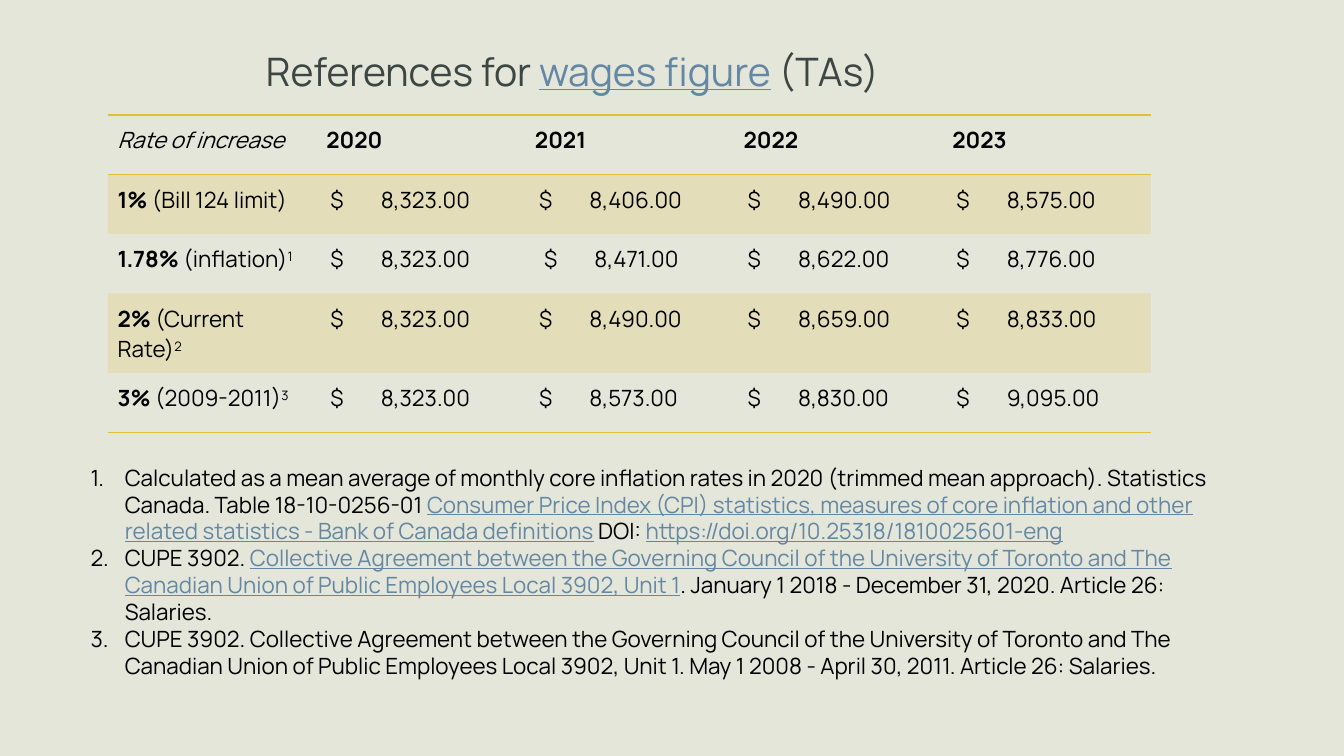
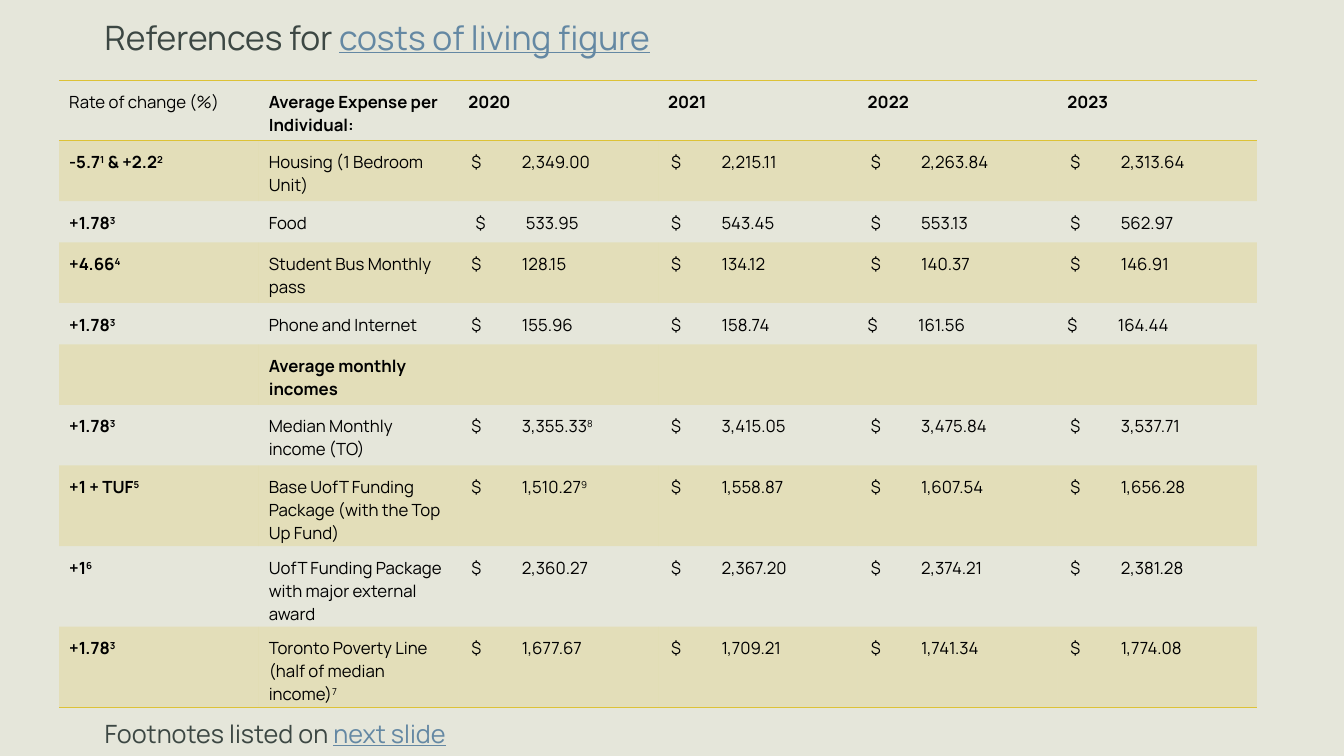
from itertools import product

from lxml import etree
from pptx import Presentation
from pptx import util as u
from pptx.dml.color import RGBColor
from pptx.enum import text
from pptx.oxml.ns import qn

WIDTH, HEIGHT = 13.33, 7.5
FONT = "Manrope"
COLORS = {
    "background": "E5E6DA",
    "title": "3C4743",
    "link": "6488A3",
    "body": "000000",
    "gold": "DDC237",
}
BAND_ALPHA = 20


def bold(words):
    return words, "bold"


def italic(words):
    return words, "italic"


def link(words):
    return words, "link"


def sup(words):
    return words, "sup"


def bold_sup(words):
    return words, "bold sup"


def across(percent):
    return u.Inches(WIDTH * percent / 100)


def down(percent):
    return u.Inches(HEIGHT * percent / 100)


class Deck:
    """Shared style and the slide being built."""

    def __init__(self):
        self.presentation = Presentation()
        self.presentation.slide_width = u.Inches(WIDTH)
        self.presentation.slide_height = u.Inches(HEIGHT)
        self.slide = None

    def new_slide(self):
        self.slide = self.presentation.slides.add_slide(self.presentation.slide_layouts[6])
        fill = self.slide.background.fill
        fill.solid()
        fill.fore_color.rgb = RGBColor.from_string(COLORS["background"])

    def add_runs(self, paragraph, parts, size, color):
        """Fill a paragraph from plain strings and (words, style) pairs."""
        parts = parts if isinstance(parts, list) else [parts]
        for part in parts:
            words, style = part if isinstance(part, tuple) else (part, "")
            run = paragraph.add_run()
            run.text = words
            font = run.font
            font.name, font.size = FONT, u.Pt(size)
            font.bold = "bold" in style
            font.italic = "italic" in style
            font.underline = "link" in style
            font.color.rgb = RGBColor.from_string(COLORS["link" if "link" in style else color])
            if "sup" in style:
                font._element.set("baseline", "30000")

    def text_box(self, left, top, width, height):
        """Add a wrapping box; lengths are percentages of the slide's size."""
        shape = self.slide.shapes.add_textbox(
            across(left), down(top), across(width), down(height))
        shape.text_frame.word_wrap = True
        return shape.text_frame

    def heading(self, box, parts, size):
        self.add_runs(self.text_box(*box).paragraphs[0], parts, size, "title")

    def numbered_list(self, box, items, size):
        frame = self.text_box(*box)
        for index, parts in enumerate(items):
            paragraph = frame.add_paragraph() if index else frame.paragraphs[0]
            properties = paragraph._p.get_or_add_pPr()
            properties.set("marL", str(u.Inches(0.5)))
            properties.set("indent", str(u.Inches(-0.34)))
            bullet_color = etree.SubElement(properties, qn("a:buClr"))
            etree.SubElement(bullet_color, qn("a:srgbClr"), val=COLORS["body"])
            etree.SubElement(properties, qn("a:buFont"), typeface=FONT)
            etree.SubElement(properties, qn("a:buAutoNum"), type="arabicPeriod")
            self.add_runs(paragraph, parts, size, "body")

    def amount(self, paragraph, value, size, stops):
        """Set a dollar sign and a value, at two distances from the cell's text edge."""
        start, tab = stops
        properties = paragraph._p.get_or_add_pPr()
        properties.set("marL", str(u.Inches(start)))
        properties.set("indent", "0")
        tabs = etree.SubElement(properties, qn("a:tabLst"))
        etree.SubElement(tabs, qn("a:tab"), pos=str(u.Inches(tab)), algn="l")
        value = value if isinstance(value, list) else [value]
        self.add_runs(paragraph, ["$\t" + value[0], *value[1:]], size, "body")

    def border(self, cell, sides):
        """Draw gold rules on the named sides and none on the others."""
        properties = cell._tc.get_or_add_tcPr()
        for position, side in enumerate(("lnL", "lnR", "lnT", "lnB")):
            line = etree.Element(qn("a:" + side), w=str(u.Pt(1)))
            if side in sides:
                fill = etree.SubElement(line, qn("a:solidFill"))
                etree.SubElement(fill, qn("a:srgbClr"), val=COLORS["gold"])
            else:
                etree.SubElement(line, qn("a:noFill"))
            properties.insert(position, line)

    def table(self, left, top, column_width, heights, rows, size, first_amount, stops):
        """Add a banded table; columns from first_amount on hold money below the header."""
        row_count, column_count = len(rows), len(rows[0])
        table = self.slide.shapes.add_table(
            row_count, column_count, across(left), down(top),
            u.Inches(column_width * column_count), u.Inches(sum(heights))).table
        for column in table.columns:
            column.width = u.Inches(column_width)
        for row, height in zip(table.rows, heights):
            row.height = u.Inches(height)
        for r, c in product(range(row_count), range(column_count)):
            cell, value = table.cell(r, c), rows[r][c]
            cell.margin_left = cell.margin_right = u.Inches(0.1)
            cell.margin_top = cell.margin_bottom = u.Inches(0.1)
            cell.vertical_anchor = text.MSO_ANCHOR.TOP
            if r % 2:
                cell.fill.solid()
                cell.fill.fore_color.rgb = RGBColor.from_string(COLORS["gold"])
                color = cell._tc.tcPr.find(".//" + qn("a:srgbClr"))
                etree.SubElement(color, qn("a:alpha"), val=str(BAND_ALPHA * 1000))
            else:
                cell.fill.background()
            sides = {0: ("lnT", "lnB"), 1: ("lnT",), row_count - 1: ("lnB",)}
            self.border(cell, sides.get(r, ()))
            paragraph = cell.text_frame.paragraphs[0]
            if not value:
                paragraph.font.size = u.Pt(size)
            elif r and c >= first_amount:
                self.amount(paragraph, value, size, stops(r, c, value))
            else:
                self.add_runs(paragraph, value, size, "body")


YEARS = [bold(str(year)) for year in range(2020, 2024)]

WAGES = [
    [italic("Rate of increase"), *YEARS],
    [[bold("1%"), " (Bill 124 limit)"], "8,323.00", "8,406.00", "8,490.00", "8,575.00"],
    [[bold("1.78%"), " (inflation)", sup("1")], "8,323.00", "8,471.00", "8,622.00", "8,776.00"],
    [[bold("2%"), " (Current Rate)", sup("2")], "8,323.00", "8,490.00", "8,659.00", "8,833.00"],
    [[bold("3%"), " (2009-2011)", sup("3")], "8,323.00", "8,573.00", "8,830.00", "9,095.00"],
]

WAGE_SOURCES = [
    ["Calculated as a mean average of monthly core inflation rates in 2020 (trimmed mean "
     "approach). Statistics Canada. Table 18-10-0256-01 ",
     link("Consumer Price Index (CPI) statistics, measures of core inflation and other related "
          "statistics - Bank of Canada definitions"),
     " DOI: ", link("https://doi.org/10.25318/1810025601-eng")],
    ["CUPE 3902. ",
     link("Collective Agreement between the Governing Council of the University of Toronto and "
          "The Canadian Union of Public Employees Local 3902, Unit 1"),
     ". January 1 2018 - December 31, 2020. Article 26: Salaries."],
    "CUPE 3902. Collective Agreement between the Governing Council of the University of Toronto "
    "and The Canadian Union of Public Employees Local 3902, Unit 1. May 1 2008 - April 30, 2011. "
    "Article 26: Salaries.",
]

INFLATION = [bold("+1.78"), bold_sup("3")]
LIVING_COSTS = [
    ["Rate of change (%)", bold("Average Expense per Individual:"), *YEARS],
    [[bold("-5.7"), bold_sup("1"), bold(" & +2.2"), bold_sup("2")], "Housing (1 Bedroom Unit)",
     "2,349.00", "2,215.11", "2,263.84", "2,313.64"],
    [INFLATION, "Food", "533.95", "543.45", "553.13", "562.97"],
    [[bold("+4.66"), bold_sup("4")], "Student Bus Monthly pass",
     "128.15", "134.12", "140.37", "146.91"],
    [INFLATION, "Phone and Internet", "155.96", "158.74", "161.56", "164.44"],
    ["", bold("Average monthly incomes"), "", "", "", ""],
    [INFLATION, "Median Monthly income (TO)",
     ["3,355.33", sup("8")], "3,415.05", "3,475.84", "3,537.71"],
    [[bold("+1 + TUF"), bold_sup("5")], "Base UofT Funding Package (with the Top Up Fund)",
     ["1,510.27", sup("9")], "1,558.87", "1,607.54", "1,656.28"],
    [[bold("+1"), bold_sup("6")], "UofT Funding Package with major external award",
     "2,360.27", "2,367.20", "2,374.21", "2,381.28"],
    [INFLATION, ["Toronto Poverty Line (half of median income)", sup("7")],
     "1,677.67", "1,709.21", "1,741.34", "1,774.08"],
]


def wage_stops(row, column, value):
    return (0.09, 0.39) if (row, column) == (2, 2) else (0.04, 0.26)


def cost_stops(row, column, value):
    """Set smaller sums further in, and the 2020 column further than the rest."""
    special = {(2, 2): (0.07, 0.46), (4, 4): (0, 0.27), (4, 5): (0, 0.27)}
    thousands = "," in value[0] or "," in value
    tab = (0.3 if thousands else 0.43) if column == 2 else (0.19 if thousands else 0.3)
    return special.get((row, column), (0.03, tab))


def main():
    deck = Deck()

    # Wages: title, table and numbered sources
    deck.new_slide()
    deck.heading((19.05, 5.6, 49.6, 7.6),
                 ["References for ", link("wages figure"), " (TAs)"], 28)
    deck.table(8, 15.2, 2.07, [0.59, 0.59, 0.59, 0.79, 0.59], WAGES, 16, 1, wage_stops)
    deck.numbered_list((4.8, 60.7, 87.6, 30.1), WAGE_SOURCES, 16)

    # Costs of living: table, title and closing note
    deck.new_slide()
    short, medium, tall = 0.41, 0.6, 0.8
    heights = [medium, medium, short, medium, short, medium, medium, tall, tall, tall]
    deck.table(4.4, 10.6, 1.98, heights, LIVING_COSTS, 12, 2, cost_stops)
    deck.heading((7.05, 1.6, 43.9, 6.7), ["References for ", link("costs of living figure")], 24)
    deck.heading((7.05, 94.4, 26.9, 5.3), ["Footnotes listed on ", link("next slide")], 18)

    deck.presentation.save("out.pptx")


if __name__ == "__main__":
    main()
